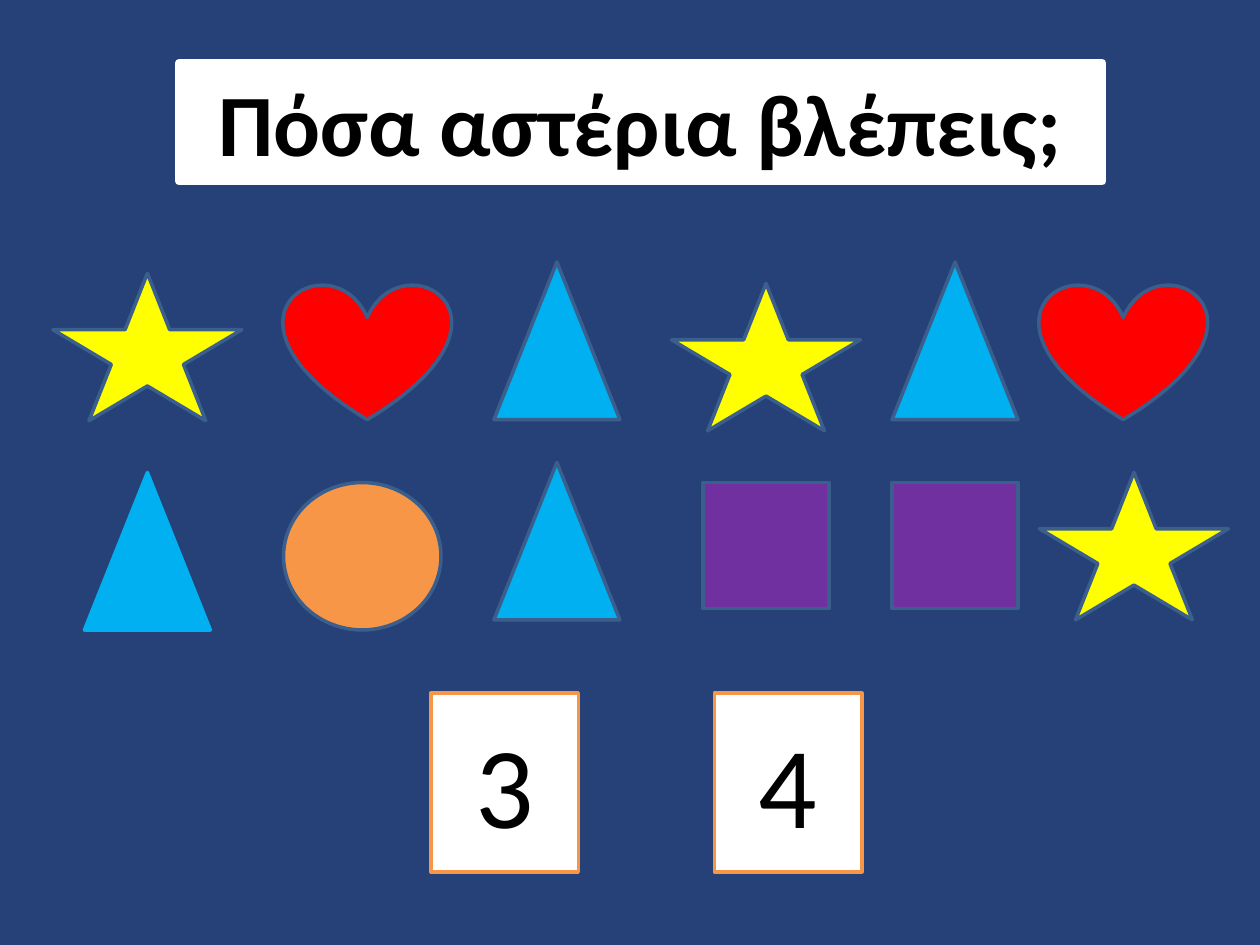
from pptx import Presentation
from pptx.dml.color import RGBColor
from pptx.enum.shapes import MSO_SHAPE
from pptx.enum.text import MSO_ANCHOR, PP_ALIGN
from pptx.util import Inches, Pt

YELLOW, RED, BLUE, ORANGE, PURPLE = "FFFF00", "FF0000", "00B0F0", "F79646", "7030A0"
WHITE, BLACK, NAVY, OUTLINE = "FFFFFF", "000000", "264178", "3A5F8C"


def rgb(value):
    return RGBColor.from_string(value)


def add_figure(kind, left, top, width, height, fill, line=OUTLINE, weight=2,
               text="", size=18, bold=False, anchor=MSO_ANCHOR.MIDDLE):
    figure = slide.shapes.add_shape(
        kind, Inches(left), Inches(top), Inches(width), Inches(height))
    figure.shadow.inherit = False
    figure.fill.solid()
    figure.fill.fore_color.rgb = rgb(fill)
    figure.line.color.rgb = rgb(line)
    figure.line.width = Pt(weight)
    if text:
        frame = figure.text_frame
        frame.word_wrap = True
        frame.vertical_anchor = anchor
        paragraph = frame.paragraphs[0]
        paragraph.text = text
        paragraph.alignment = PP_ALIGN.CENTER
        paragraph.font.name = "Calibri"
        paragraph.font.size = Pt(size)
        paragraph.font.bold = bold
        paragraph.font.color.rgb = rgb(BLACK)


prs = Presentation()
prs.slide_width, prs.slide_height = Inches(10), Inches(7.5)
slide = prs.slides.add_slide(prs.slide_layouts[6])
slide.background.fill.solid()
slide.background.fill.fore_color.rgb = rgb(NAVY)

# Figures to count: kind, size, colour and the places of each
figures = [
    (MSO_SHAPE.STAR_5_POINT, 1.5, 1.17, YELLOW, [(0.42, 2.17), (5.33, 2.25), (8.25, 3.75)]),
    (MSO_SHAPE.HEART, 1.33, 1.08, RED, [(2.25, 2.25), (8.25, 2.25)]),
    (MSO_SHAPE.ISOSCELES_TRIANGLE, 1, 1.25, BLUE, [(3.92, 2.08), (7.08, 2.08), (3.92, 3.67)]),
    (MSO_SHAPE.OVAL, 1.25, 1.17, ORANGE, [(2.25, 3.83)]),
    (MSO_SHAPE.RECTANGLE, 1, 1, PURPLE, [(5.58, 3.83), (7.08, 3.83)]),
]
for kind, width, height, color, places in figures:
    for left, top in places:
        add_figure(kind, left, top, width, height, color)

# The one triangle outlined in its own colour
add_figure(MSO_SHAPE.ISOSCELES_TRIANGLE, 0.67, 3.75, 1, 1.25, BLUE, line=BLUE)

# Answer cards
for answer, left in [("3", 3.42), ("4", 5.67)]:
    add_figure(MSO_SHAPE.RECTANGLE, left, 5.5, 1.17, 1.42, WHITE, line=ORANGE,
               text=answer, size=66)

# Question
add_figure(MSO_SHAPE.RECTANGLE, 1.42, 0.5, 7.33, 0.94, WHITE, line=WHITE, weight=4.5,
           text="Πόσα αστέρια βλέπεις;", size=50, bold=True, anchor=MSO_ANCHOR.TOP)

prs.save("out.pptx")
